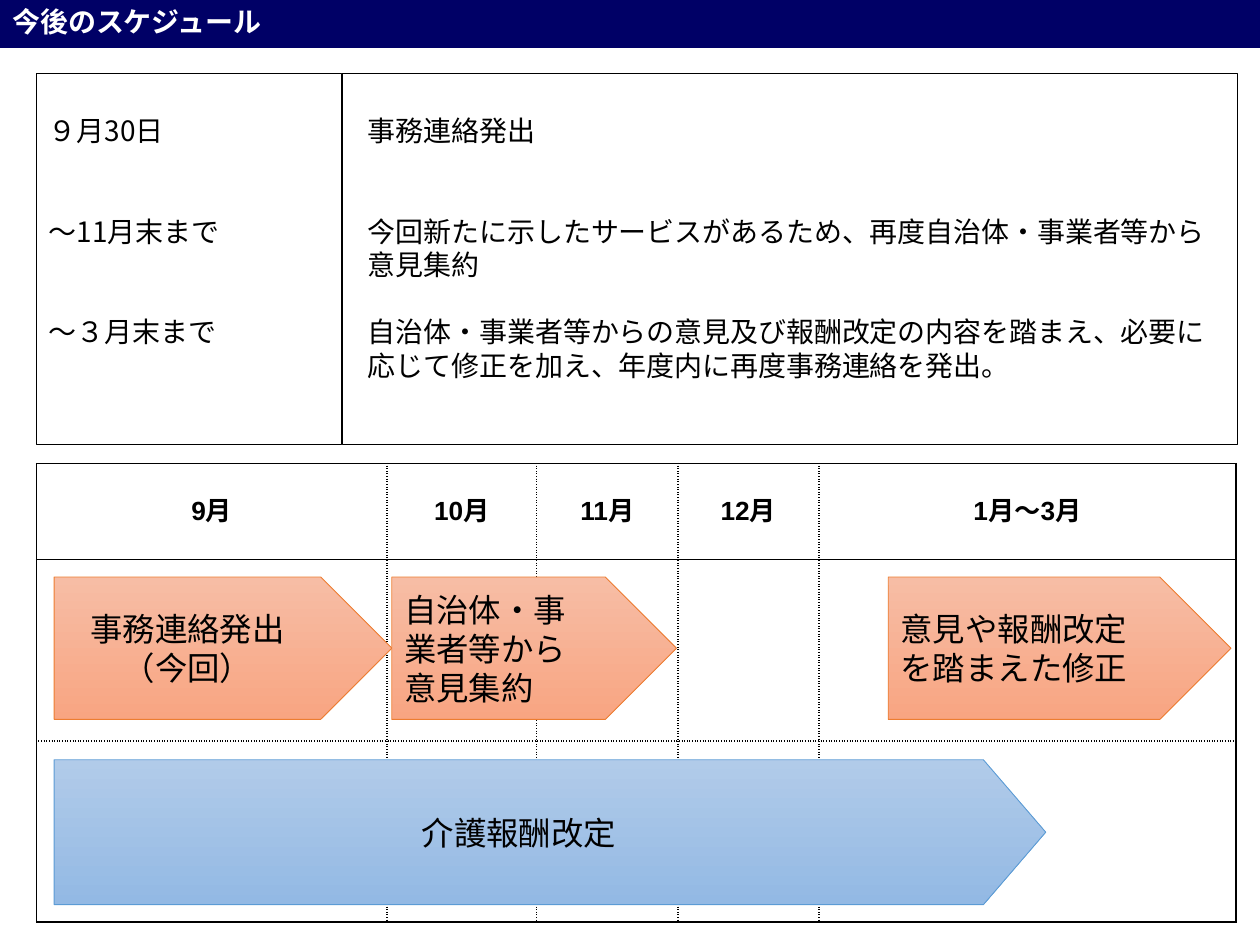
from lxml.etree import SubElement
from pptx import Presentation
from pptx.dml.color import RGBColor
from pptx.enum.shapes import MSO_SHAPE
from pptx.enum.text import MSO_ANCHOR, PP_ALIGN
from pptx.oxml.ns import qn
from pptx.util import Inches, Pt

NAVY = RGBColor(0x00, 0x00, 0x66)
WHITE = RGBColor(0xFF, 0xFF, 0xFF)
BLACK = RGBColor(0x00, 0x00, 0x00)
ORANGE = RGBColor(0xED, 0x7D, 0x31)
ORANGE_FADE = (RGBColor(0xF7, 0xBD, 0xA5), RGBColor(0xF8, 0xA5, 0x82))
BLUE = RGBColor(0x5B, 0x9B, 0xD5)
BLUE_FADE = (RGBColor(0xB1, 0xCB, 0xE9), RGBColor(0x93, 0xB9, 0xE4))
NOTO = "Noto Sans CJK JP"
LINE_PITCH = 19.2
COLUMN_WIDTHS = (2.78, 1.19, 1.12, 1.12, 1.05, 1.05, 1.21)
ROW_HEIGHTS = (0.76, 1.44, 1.44)
MONTHS = ("9月", "10月", "11月", "12月", "1月～3月")
COLUMN_EDGES = ("solid",) + ("sysDot",) * 4 + (None, None, "solid")
ROW_EDGES = ("solid", "solid", "sysDot", "solid")


def add_span(para, text, size, font, color=BLACK, bold=False):
    """Add one run, with the same typeface for Latin and Japanese letters."""
    span = para.add_run()
    span.text = text
    span.font.size = Pt(size)
    span.font.name = font
    span.font.bold = bold
    span.font.color.rgb = color
    SubElement(span.font._element, qn("a:ea"), typeface=font)


def add_block(page, kind, left, top, width, height):
    """Add a shadowless shape that wraps its text."""
    block = page.shapes.add_shape(
        kind, Inches(left), Inches(top), Inches(width), Inches(height))
    block.shadow.inherit = False
    block.text_frame.word_wrap = True
    return block


def add_title(page, text):
    """Add the title band across the top."""
    band = add_block(page, MSO_SHAPE.RECTANGLE, 0, 0, 10, 0.38)
    band.fill.solid()
    band.fill.fore_color.rgb = NAVY
    band.line.fill.background()
    band.text_frame.vertical_anchor = MSO_ANCHOR.MIDDLE
    para = band.text_frame.paragraphs[0]
    para.alignment = PP_ALIGN.LEFT
    para.line_spacing = 0.9
    add_span(para, text, 16, NOTO, WHITE, True)


def add_list_box(page, left, width, indent, entries):
    """Add a framed box of (lines left empty above, text) entries."""
    box = add_block(page, MSO_SHAPE.RECTANGLE, left, 0.58, width, 2.95)
    box.fill.background()
    box.line.color.rgb = BLACK
    box.line.width = Pt(0.5)
    frame = box.text_frame
    frame.vertical_anchor = MSO_ANCHOR.TOP
    frame.margin_top = Inches(0.32)
    frame.margin_left = Inches(0.1 + indent)
    for index, (gap, text) in enumerate(entries):
        para = frame.add_paragraph() if index else frame.paragraphs[0]
        para.alignment = PP_ALIGN.LEFT
        para.line_spacing = Pt(LINE_PITCH)
        para.space_before = Pt(gap * LINE_PITCH)
        add_span(para, text, 16, NOTO)


def add_arrow(page, place, lines, align, fade, outline, head=0.5):
    """Add a full-height arrow with a vertical colour fade."""
    arrow = add_block(page, MSO_SHAPE.RIGHT_ARROW, *place)
    arrow.adjustments[0] = 1
    arrow.adjustments[1] = head
    arrow.fill.gradient()
    arrow.fill.gradient_angle = 270
    for stop, color in zip(arrow.fill.gradient_stops, fade):
        stop.color.rgb = color
    arrow.line.color.rgb = outline
    arrow.line.width = Pt(0.5)
    frame = arrow.text_frame
    frame.vertical_anchor = MSO_ANCHOR.MIDDLE
    for index, text in enumerate(lines):
        para = frame.add_paragraph() if index else frame.paragraphs[0]
        para.alignment = align
        add_span(para, text, 18.5, "Calibri")


def add_border(cell, side, dash):
    """Draw one side of a cell, or clear it when dash is None."""
    line = SubElement(cell._tc.get_or_add_tcPr(), qn(f"a:ln{side}"), w=str(Pt(1)))
    if dash is None:
        SubElement(line, qn("a:noFill"))
        return
    fill = SubElement(line, qn("a:solidFill"))
    SubElement(fill, qn("a:srgbClr"), val=str(BLACK))
    SubElement(line, qn("a:prstDash"), val=dash)


def add_calendar(page):
    """Add the month grid with dotted inner lines."""
    table = page.shapes.add_table(
        len(ROW_HEIGHTS), len(COLUMN_WIDTHS), Inches(0.29), Inches(3.68),
        Inches(sum(COLUMN_WIDTHS)), Inches(sum(ROW_HEIGHTS))).table
    table.first_row = table.horz_banding = False
    for column, width in zip(table.columns, COLUMN_WIDTHS):
        column.width = Inches(width)
    for row, height in zip(table.rows, ROW_HEIGHTS):
        row.height = Inches(height)
    table.cell(0, 4).merge(table.cell(0, 6))
    for r in range(len(ROW_HEIGHTS)):
        for c in range(len(COLUMN_WIDTHS)):
            cell = table.cell(r, c)
            right = c + (cell.span_width if cell.is_merge_origin else 1)
            add_border(cell, "L", COLUMN_EDGES[c])
            add_border(cell, "R", COLUMN_EDGES[right])
            add_border(cell, "T", ROW_EDGES[r])
            add_border(cell, "B", ROW_EDGES[r + 1])
            cell.fill.background()
    for c, month in enumerate(MONTHS):
        cell = table.cell(0, c)
        cell.vertical_anchor = MSO_ANCHOR.MIDDLE
        para = cell.text_frame.paragraphs[0]
        para.alignment = PP_ALIGN.CENTER
        add_span(para, month, 15, "Arial", bold=True)


def main():
    """Build the schedule slide and save it."""
    deck = Presentation()
    deck.slide_width, deck.slide_height = Inches(10), Inches(7.5)
    page = deck.slides.add_slide(deck.slide_layouts[6])
    add_calendar(page)
    add_arrow(page, (0.43, 6.03, 7.87, 1.15), ["介護報酬改定"],
              PP_ALIGN.CENTER, BLUE_FADE, BLUE, 0.43)
    steps = (
        (0.43, 2.68, ["事務連絡発出", "（今回）"], PP_ALIGN.CENTER),
        (3.11, 2.26, ["自治体・事業者等から意見集約"], PP_ALIGN.LEFT),
        (7.05, 2.72, ["意見や報酬改定を踏まえた修正"], PP_ALIGN.LEFT),
    )
    for left, width, lines, align in steps:
        add_arrow(page, (left, 4.58, width, 1.13), lines, align, ORANGE_FADE, ORANGE)
    add_title(page, "今後のスケジュール")
    add_list_box(page, 0.29, 2.42, 0, (
        (0, "９月30日"), (2, "～11月末まで"), (2, "～３月末まで")))
    add_list_box(page, 2.72, 7.1, 0.1, (
        (0, "事務連絡発出"),
        (2, "今回新たに示したサービスがあるため、再度自治体・事業者等から意見集約"),
        (1, "自治体・事業者等からの意見及び報酬改定の内容を踏まえ、"
            "必要に応じて修正を加え、年度内に再度事務連絡を発出。")))
    deck.save("out.pptx")


if __name__ == "__main__":
    main()
